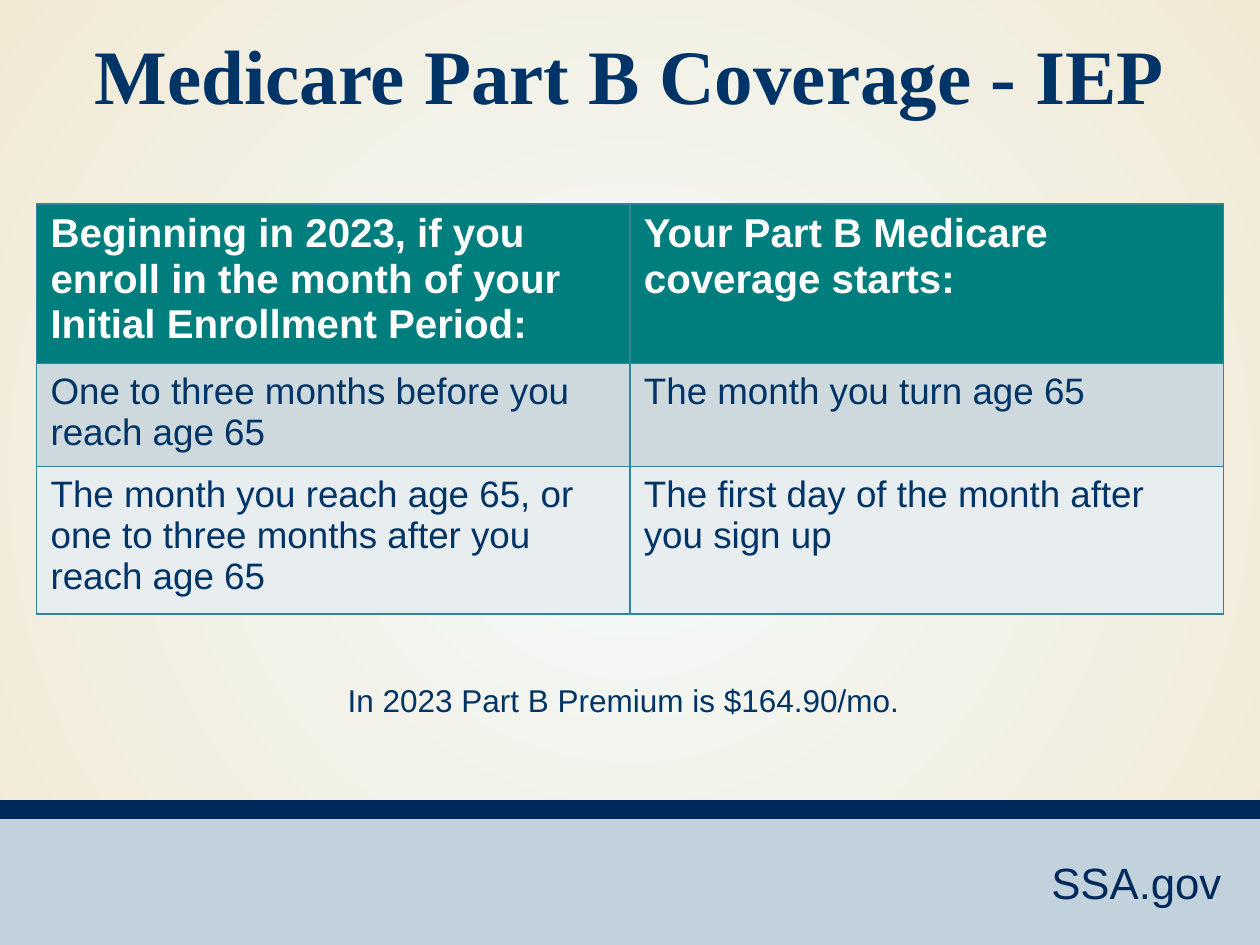
from dataclasses import dataclass

from lxml import etree
from pptx import Presentation
from pptx.dml.color import RGBColor
from pptx.enum.shapes import MSO_SHAPE
from pptx.enum.text import MSO_ANCHOR, PP_ALIGN
from pptx.oxml import parse_xml
from pptx.oxml.ns import nsdecls, qn
from pptx.util import Cm, Pt

RECTANGLE = MSO_SHAPE.RECTANGLE
MIDDLE = MSO_ANCHOR.MIDDLE
LEFT, CENTER, RIGHT = PP_ALIGN.LEFT, PP_ALIGN.CENTER, PP_ALIGN.RIGHT


@dataclass(frozen=True)
class Theme:
    heading_font: str = "Times New Roman"
    body_font: str = "Arial"
    text: str = "003366"
    navy: str = "00295B"
    footer: str = "C1D2DC"
    white: str = "FFFFFF"
    border: str = "31859B"
    glow: tuple = ("F3FAFB", "F2E9D5")
    row_fills: tuple = ("007D7D", "CED9DE", "E8EDEF")
    title_size: int = 44
    site_size: int = 25
    header_size: int = 23
    cell_size: int = 21
    note_size: int = 18


THEME = Theme()
ROW_HEIGHTS = (3.0, 1.93, 2.78)
COVERAGE = (
    ("Beginning in 2023, if you enroll in the month of your Initial Enrollment Period:",
     "Your Part B Medicare coverage starts:"),
    ("One to three months before you reach age 65",
     "The month you turn age 65"),
    ("The month you reach age 65, or one to three months after you reach age 65",
     "The first day of the month after you sign up"),
)


def write(frame, text, size, color, font=THEME.body_font, bold=False, align=LEFT):
    frame.word_wrap = True
    paragraph = frame.paragraphs[0]
    paragraph.text = text
    paragraph.alignment = align
    paragraph.font.name = font
    paragraph.font.size = Pt(size)
    paragraph.font.bold = bold
    paragraph.font.color.rgb = RGBColor.from_string(color)


def paint_background(page):
    fill = page.background.fill
    fill.gradient()
    for stop, color in zip(fill.gradient_stops, THEME.glow):
        stop.color.rgb = RGBColor.from_string(color)
    gradient = page.element.find(".//" + qn("a:gradFill"))
    gradient.remove(gradient.find(qn("a:lin")))
    gradient.append(parse_xml(
        f'<a:path {nsdecls("a")} path="circle">'
        '<a:fillToRect l="50000" t="50000" r="50000" b="50000"/></a:path>'))


def add_band(page, top, width, height, color):
    band = page.shapes.add_shape(RECTANGLE, 0, Cm(top), width, Cm(height))
    band.shadow.inherit = False
    band.fill.solid()
    band.fill.fore_color.rgb = RGBColor.from_string(color)
    band.line.fill.background()


def add_text(page, left, top, width, height, text, size, color, align=LEFT):
    box = page.shapes.add_textbox(Cm(left), Cm(top), Cm(width), Cm(height))
    write(box.text_frame, text, size, color, align=align)


def set_title(page, text, width):
    title = page.shapes.title
    title.left, title.top, title.width, title.height = 0, Cm(0.43), width, Cm(2.1)
    title.text_frame.vertical_anchor = MIDDLE
    write(title.text_frame, text, THEME.title_size, THEME.text,
          THEME.heading_font, True, CENTER)


def add_borders(cell):
    properties = cell._tc.get_or_add_tcPr()
    for index, side in enumerate(("lnL", "lnR", "lnT", "lnB")):
        line = etree.Element(qn(f"a:{side}"), w=str(Pt(1)))
        fill = etree.SubElement(line, qn("a:solidFill"))
        etree.SubElement(fill, qn("a:srgbClr"), val=THEME.border)
        properties.insert(index, line)


def style_cell(cell, text, fill, is_header):
    cell.margin_left = cell.margin_right = Cm(0.28)
    cell.margin_top = cell.margin_bottom = Cm(0.15)
    cell.fill.solid()
    cell.fill.fore_color.rgb = RGBColor.from_string(fill)
    size = THEME.header_size if is_header else THEME.cell_size
    color = THEME.white if is_header else THEME.text
    write(cell.text_frame, text, size, color, bold=is_header)
    add_borders(cell)


def add_coverage_table(page):
    table = page.shapes.add_table(
        len(COVERAGE), len(COVERAGE[0]), Cm(0.74), Cm(4.11),
        Cm(23.92), Cm(sum(ROW_HEIGHTS))).table
    for index, (texts, height, fill) in enumerate(
            zip(COVERAGE, ROW_HEIGHTS, THEME.row_fills)):
        table.rows[index].height = Cm(height)
        for column, text in enumerate(texts):
            style_cell(table.cell(index, column), text, fill, index == 0)


def main():
    deck = Presentation()
    deck.slide_width, deck.slide_height = Cm(25.4), Cm(19.05)
    page = deck.slides.add_slide(deck.slide_layouts[5])
    paint_background(page)
    add_band(page, 16.38, deck.slide_width, 2.67, THEME.footer)
    add_band(page, 16.13, deck.slide_width, 0.38, THEME.navy)
    add_text(page, 17.07, 17.12, 7.8, 1.32, "SSA.gov",
             THEME.site_size, THEME.navy, RIGHT)
    set_title(page, "Medicare Part B Coverage - IEP", deck.slide_width)
    add_coverage_table(page)
    add_text(page, 6.76, 13.61, 14.45, 1.02,
             "In 2023 Part B Premium is $164.90/mo.", THEME.note_size, THEME.text)
    deck.save("out.pptx")


if __name__ == "__main__":
    main()
